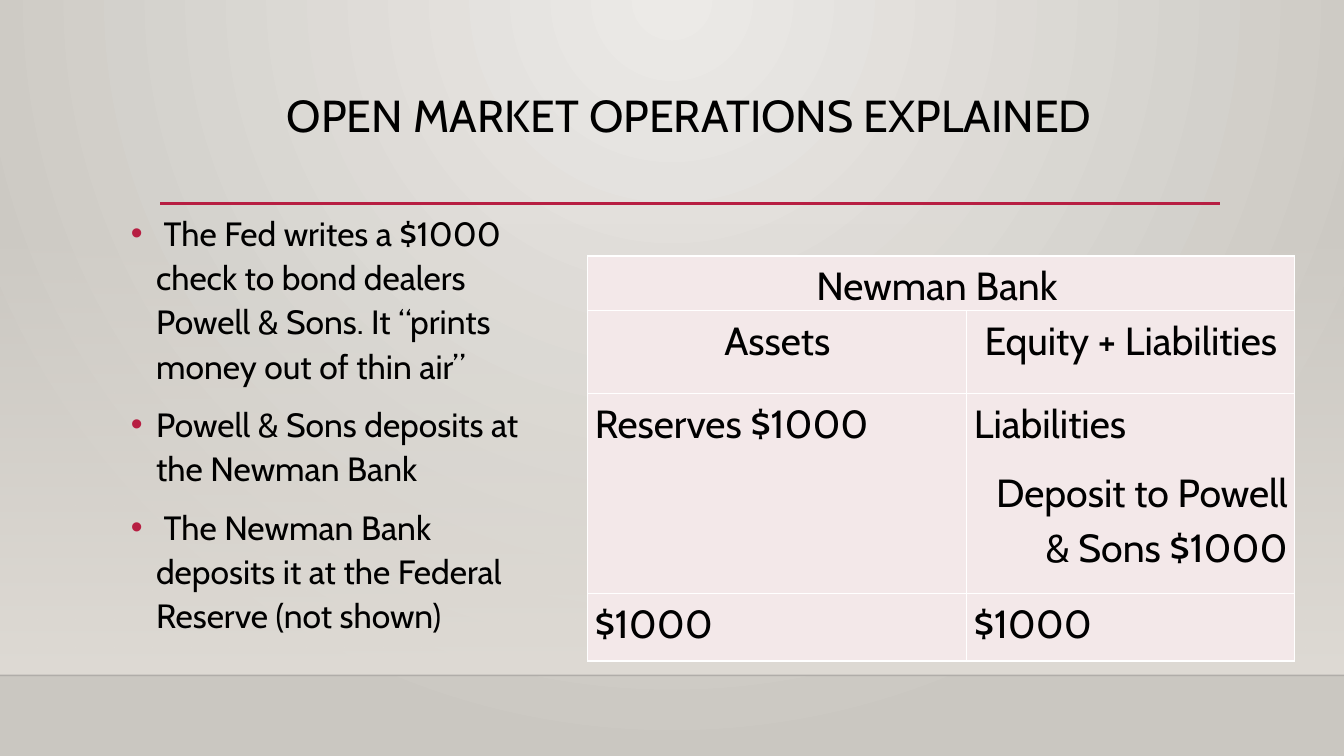
from lxml import etree
from pptx import Presentation
from pptx.dml.color import RGBColor
from pptx.enum import shapes, text
from pptx.oxml import parse_xml
from pptx.oxml.ns import nsdecls, qn
from pptx.util import Inches, Pt

BLACK, CRIMSON, BLUSH, SAND = "000000", "B71E42", "F3E8E9", "DFDBD5"
ALIGN = text.PP_ALIGN


def color(hex_code):
    return RGBColor.from_string(hex_code)


def write(frame, content, size, align=ALIGN.LEFT, spacing=1.0, before=0, after=0, bullet=False):
    """Add one paragraph, using the first paragraph while it is still empty."""
    first = not frame.text
    paragraph = frame.paragraphs[0] if first else frame.add_paragraph()
    if bullet:
        properties = paragraph._p.get_or_add_pPr()
        properties.set("marL", str(Inches(0.25)))
        properties.set("indent", str(-Inches(0.25)))
        bullet_color = etree.SubElement(properties, qn("a:buClr"))
        etree.SubElement(bullet_color, qn("a:srgbClr"), val=CRIMSON)
        etree.SubElement(properties, qn("a:buFont"), typeface="Arial")
        etree.SubElement(properties, qn("a:buChar"), char="•")
    paragraph.alignment = align
    paragraph.line_spacing = spacing
    paragraph.space_before = Pt(0 if first else before)
    paragraph.space_after = Pt(after)
    run = paragraph.add_run()
    run.text = content
    run.font.name = "Cabin"
    run.font.size = Pt(size)
    run.font.color.rgb = color(BLACK)


presentation = Presentation()
presentation.slide_width, presentation.slide_height = Inches(13.33), Inches(7.5)
slide = presentation.slides.add_slide(presentation.slide_layouts[5])

# Background: radial glow from the top centre
background = slide.background.fill
background.gradient()
for stop, shade in zip(background.gradient_stops, ("ECEAE7", "CAC7C1")):
    stop.color.rgb = color(shade)
linear = next(slide.element.iter(qn("a:lin")))
linear.getparent().replace(linear, parse_xml(
    f'<a:path {nsdecls("a")} path="circle">'
    '<a:fillToRect l="43000" t="0" r="43000" b="100000"/></a:path>'))

# Wall that fades in towards the floor line
wall = slide.shapes.add_shape(
    shapes.MSO_SHAPE.RECTANGLE, Inches(0), Inches(2.21), Inches(13.33), Inches(4.49))
wall.shadow.inherit = False
wall.line.fill.background()
wall.fill.gradient()
wall.fill.gradient_angle = 270
for stop in wall.fill.gradient_stops:
    stop.color.rgb = color(SAND)
clear_end = next(wall._element.spPr.iter(qn("a:srgbClr")))
etree.SubElement(clear_end, qn("a:alpha"), val="0")

# Floor line and title rule
for left, right, top, shade, width, opacity in (
        (0, 13.33, 6.7, "000001", 1, 20), (1.59, 12.1, 2.02, CRIMSON, 2.5, 100)):
    rule = slide.shapes.add_connector(
        shapes.MSO_CONNECTOR.STRAIGHT, Inches(left), Inches(top), Inches(right), Inches(top))
    rule.line.color.rgb = color(shade)
    rule.line.width = Pt(width)
    line_color = next(rule._element.spPr.iter(qn("a:srgbClr")))
    etree.SubElement(line_color, qn("a:alpha"), val=str(opacity * 1000))
    etree.SubElement(rule._element.spPr, qn("a:effectLst"))

# Title
title = slide.shapes.title
title.left, title.top, title.width, title.height = map(Inches, (1.59, 0.88, 10.5, 1.15))
title.text_frame.vertical_anchor = text.MSO_ANCHOR.TOP
title.text_frame.word_wrap = True
write(title.text_frame, "OPEN MARKET OPERATIONS EXPLAINED", 32, ALIGN.CENTER, 0.9)

# Steps
steps = slide.shapes.add_textbox(Inches(1.2), Inches(2.02), Inches(4.3), Inches(4.4)).text_frame
steps.word_wrap = True
for step in (
        " The Fed writes a $1000 check to bond dealers Powell & Sons. "
        "It “prints money out of thin air”",
        "Powell & Sons deposits at the Newman Bank",
        " The Newman Bank deposits it at the Federal Reserve (not shown)"):
    write(steps, step, 24, spacing=1.1, before=10, bullet=True)

# Balance sheet: each cell is a list of (text, alignment, space after)
balance_rows = (
    (0.4, [[("Newman Bank ", ALIGN.CENTER, 10)], []]),
    (0.83, [[("Assets", ALIGN.CENTER, 0)], [("Equity + Liabilities", ALIGN.CENTER, 0)]]),
    (1.98, [[("Reserves $1000", ALIGN.JUSTIFY, 10)],
            [("Liabilities ", ALIGN.JUSTIFY, 10),
             ("Deposit to Powell & Sons $1000", ALIGN.RIGHT, 10)]]),
    (0.67, [[("$1000", ALIGN.JUSTIFY, 10)], [("$1000", ALIGN.JUSTIFY, 10)]]),
)
table = slide.shapes.add_table(
    len(balance_rows), 2, Inches(5.83), Inches(2.54), Inches(7.01), Inches(3.88)).table
table.columns[0].width, table.columns[1].width = Inches(3.76), Inches(3.25)
table.cell(0, 0).merge(table.cell(0, 1))
for row_index, (height, entries) in enumerate(balance_rows):
    table.rows[row_index].height = Inches(height)
    for column_index, entry in enumerate(entries):
        cell = table.cell(row_index, column_index)
        cell.margin_left = cell.margin_right = Inches(0.07)
        cell.margin_top = cell.margin_bottom = 0
        for side in ("lnL", "lnR", "lnT", "lnB"):
            cell._tc.get_or_add_tcPr().append(parse_xml(
                f'<a:{side} {nsdecls("a")} w="{Pt(1)}"><a:solidFill>'
                f'<a:srgbClr val="FFFFFF"/></a:solidFill></a:{side}>'))
        cell.fill.solid()
        cell.fill.fore_color.rgb = color(BLUSH)
        for content, align, after in entry:
            write(cell.text_frame, content, 28, align, 1.15, after=after)

presentation.save("out.pptx")
